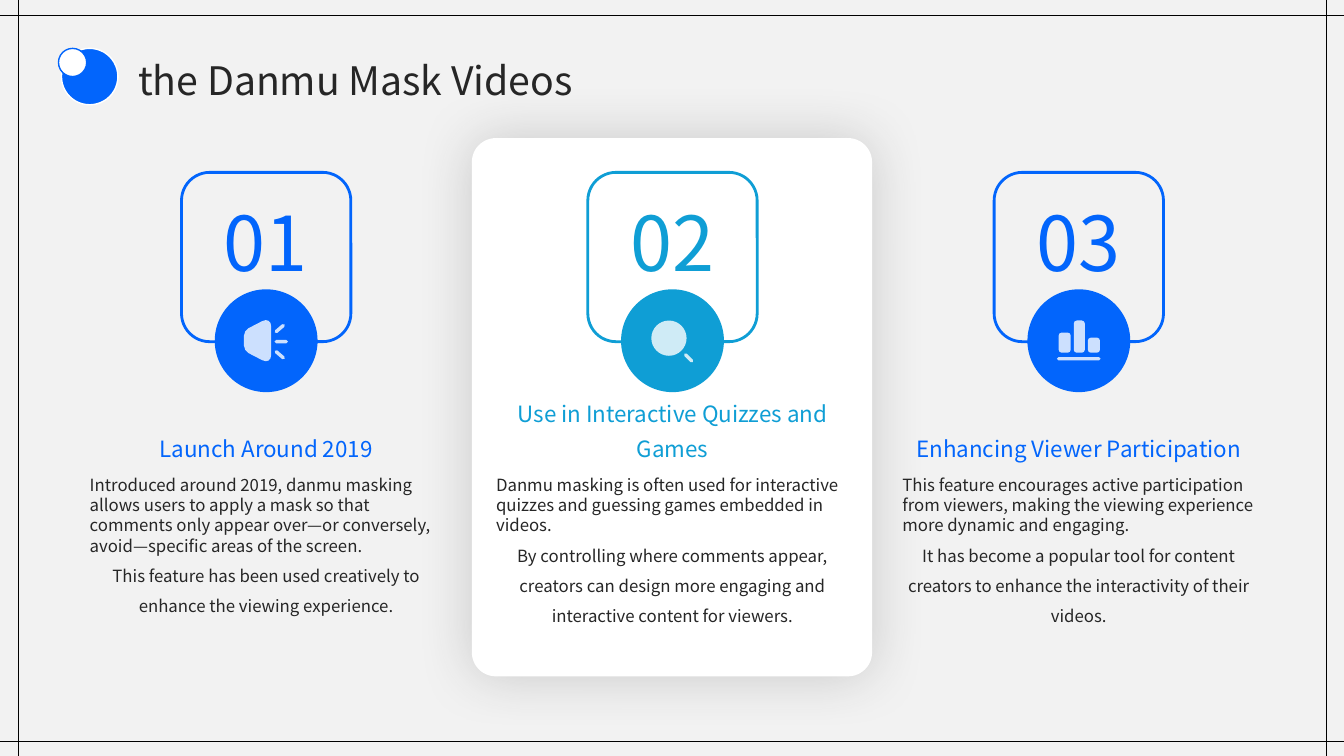
import math
from lxml import etree
from pptx import Presentation
from pptx import util as u
from pptx.dml.color import RGBColor
from pptx.enum import shapes, text
from pptx.oxml.ns import qn

FONT = "Noto Sans CJK SC"
COLORS = {"blue": "0265FC", "cyan": "0F9ED5", "white": "FFFFFF",
          "paper": "F2F2F2", "ink": "262626", "black": "000000"}
ALIGN = text.PP_ALIGN
ANCHOR = text.MSO_ANCHOR
SHAPE = shapes.MSO_SHAPE


def rgb(name):
    return RGBColor.from_string(COLORS[name])


def add_child(parent, tag, **attrs):
    return etree.SubElement(parent, qn(tag), {k: str(v) for k, v in attrs.items()})


def write(tf, content, size=12, color="ink", align=ALIGN.CENTER, spacing=1.0, first=True):
    p = tf.paragraphs[0] if first else tf.add_paragraph()
    p.alignment = align
    p.line_spacing = spacing
    p.space_before = u.Pt(0)
    r = p.add_run()
    r.text = content
    r.font.size = u.Pt(size)
    r.font.name = FONT
    r.font.bold = False
    r.font.color.rgb = rgb(color)
    for tag in ("a:ea", "a:cs"):
        add_child(r.font._element, tag, typeface=FONT)


def rounded(points, radii):
    outline = []
    for i, (x, y) in enumerate(points):
        ends = []
        for nx, ny in (points[i - 1], points[(i + 1) % len(points)]):
            share = radii[i] / math.hypot(nx - x, ny - y)
            ends.append(((nx - x) * share, (ny - y) * share))
        (ax, ay), (bx, by) = ends
        outline += [(x + ax, y + ay), (x + ax * 0.45, y + ay * 0.45),
                    (x + bx * 0.45, y + by * 0.45), (x + bx, y + by)]
    return outline


def curve_corners(path):
    points = [el for el in path if el.tag != qn("a:close")]
    for i in range(0, len(points), 4):
        first, second, last = points[i + 1:i + 4]
        first.tag = qn("a:cubicBezTo")
        for el in (second, last):
            first.append(el[0])
            path.remove(el)


def box(x, y, w, h, r):
    return rounded([(x, y), (x + w, y), (x + w, y + h), (x, y + h)], [r] * 4)


def stroke(x1, y1, x2, y2, half=0.017):
    length = math.hypot(x2 - x1, y2 - y1)
    dx, dy = (x2 - x1) / length * half, (y2 - y1) / length * half
    corners = [(x1 - dx - dy, y1 - dy + dx), (x1 - dx + dy, y1 - dy - dx),
               (x2 + dx + dy, y2 + dy - dx), (x2 + dx - dy, y2 + dy + dx)]
    return rounded(corners, [half] * 4)


SPEAKER = [rounded([(-0.22, -0.1), (0.05, -0.24), (0.05, 0.24), (-0.22, 0.1)],
                   [0.05, 0.1, 0.1, 0.05]),
           stroke(0.1, 0.01, 0.2, 0.01), stroke(0.1, -0.09, 0.17, -0.15),
           stroke(0.1, 0.11, 0.17, 0.17)]
MAGNIFIER = [stroke(0.13, 0.14, 0.19, 0.2), box(-0.21, -0.2, 0.35, 0.35, 0.175)]
BARS = [stroke(-0.2, 0.18, 0.2, 0.18), box(0.09, -0.03, 0.12, 0.15, 0.03),
        box(-0.2, -0.08, 0.12, 0.2, 0.03), box(-0.05, -0.2, 0.11, 0.32, 0.03)]


class Deck:
    def __init__(self):
        self.prs = Presentation()
        self.prs.slide_width = u.Inches(13.33)
        self.prs.slide_height = u.Inches(7.5)
        self.s = self.prs.slides.add_slide(self.prs.slide_layouts[5])

    def frame(self, sp, anchor):
        tf = sp.text_frame
        tf.word_wrap = True
        tf.auto_size = text.MSO_AUTO_SIZE.NONE
        tf.vertical_anchor = anchor
        tf.margin_left = tf.margin_right = tf.margin_top = tf.margin_bottom = 0
        return tf

    def title(self, content, *place):
        sp = self.s.shapes.title
        sp.left, sp.top, sp.width, sp.height = map(u.Inches, place)
        sp.element.getparent().append(sp.element)
        write(self.frame(sp, ANCHOR.MIDDLE), content, size=28, align=ALIGN.LEFT, spacing=1.1)

    def textbox(self, x, y, w, h, anchor=ANCHOR.TOP):
        sp = self.s.shapes.add_textbox(*map(u.Inches, (x, y, w, h)))
        return self.frame(sp, anchor)

    def shape(self, kind, x, y, w, h, fill=None, line=None, width=1, adj=None):
        sp = self.s.shapes.add_shape(kind, *map(u.Inches, (x, y, w, h)))
        sp.shadow.inherit = False
        if adj is not None:
            sp.adjustments[0] = adj
        if fill:
            sp.fill.solid()
            sp.fill.fore_color.rgb = rgb(fill)
        else:
            sp.fill.background()
        if line:
            sp.line.color.rgb = rgb(line)
            sp.line.width = u.Pt(width)
        else:
            sp.line.fill.background()
        return sp

    def glow(self, sp, blur, alpha):
        effects = sp.element.spPr.find(qn("a:effectLst"))
        shadow = add_child(effects, "a:outerShdw", blurRad=u.Pt(blur), dist=0, dir=0,
                           algn="ctr", rotWithShape=0)
        color = add_child(shadow, "a:srgbClr", val=COLORS["ink"])
        add_child(color, "a:alpha", val=alpha * 1000)

    def rule(self, x1, y1, x2, y2):
        c = self.s.shapes.add_connector(shapes.MSO_CONNECTOR.STRAIGHT,
                                        *map(u.Inches, (x1, y1, x2, y2)))
        c.line.color.rgb = rgb("black")
        c.line.width = u.Pt(0.5)
        add_child(c.element.spPr, "a:effectLst")

    def icon(self, outlines, cx, cy):
        paths = [[(u.Inches(cx + x), u.Inches(cy + y)) for x, y in outline]
                 for outline in outlines]
        fb = self.s.shapes.build_freeform(*paths[0][0])
        for i, points in enumerate(paths):
            if i:
                fb.move_to(*points[0])
            fb.add_line_segments(points[1:], close=True)
        sp = fb.convert_to_shape()
        curve_corners(next(sp.element.iter(qn("a:path"))))
        sp.shadow.inherit = False
        sp.fill.solid()
        sp.fill.fore_color.rgb = rgb("white")
        color = sp.element.spPr.find(qn("a:solidFill")).find(qn("a:srgbClr"))
        add_child(color, "a:alpha", val=80000)
        sp.line.fill.background()

    def column(self, x, number, color, icon, heading, intro, detail):
        self.shape(SHAPE.ROUNDED_RECTANGLE, x + 0.91, 1.71, 1.68, 1.68, line=color, width=2)
        self.shape(SHAPE.ROUNDED_RECTANGLE, x + 1.24, 2.87, 1.02, 1.02, fill=color, adj=0.5)
        tf = self.textbox(x + 0.97, 1.76, 1.55, 1.18, ANCHOR.MIDDLE)
        write(tf, number, size=54, color=color, spacing=1.1)
        self.icon(icon, x + 1.75, 3.38)
        tf = self.textbox(x, 4.71, 3.5, 1.72)
        write(tf, intro, align=ALIGN.LEFT)
        write(tf, detail, spacing=1.5, first=False)
        tf = self.textbox(x, 3.92, 3.5, 0.66, ANCHOR.BOTTOM)
        write(tf, heading, size=16, color=color, spacing=1.3)


COLUMNS = [
    ("01", "blue", SPEAKER, "Launch Around 2019",
     "Introduced around 2019, danmu masking allows users to apply a mask so that comments "
     "only appear over—or conversely, avoid—specific areas of the screen.",
     "This feature has been used creatively to enhance the viewing experience."),
    ("02", "cyan", MAGNIFIER, "Use in Interactive Quizzes and Games",
     "Danmu masking is often used for interactive quizzes and guessing games embedded in videos.",
     "By controlling where comments appear, creators can design more engaging and "
     "interactive content for viewers."),
    ("03", "blue", BARS, "Enhancing Viewer Participation",
     "This feature encourages active participation from viewers, making the viewing "
     "experience more dynamic and engaging.",
     "It has become a popular tool for content creators to enhance the interactivity "
     "of their videos."),
]


def main():
    deck = Deck()
    deck.shape(SHAPE.RECTANGLE, 0, 0, 13.33, 7.5, fill="paper")
    for y in (0.15, 7.35):
        deck.rule(0, y, 13.33, y)
    for x in (0.18, 13.16):
        deck.rule(x, 0, x, 7.5)
    card = deck.shape(SHAPE.ROUNDED_RECTANGLE, 4.68, 1.37, 3.97, 5.34, fill="white", adj=0.06)
    deck.glow(card, blur=40, alpha=20)
    for i, column in enumerate(COLUMNS):
        deck.column(0.89 + 4.03 * i, *column)
    deck.title("the Danmu Mask Videos", 1.37, 0.51, 4.78, 0.51)
    deck.shape(SHAPE.OVAL, 0.61, 0.48, 0.56, 0.56, fill="blue", line="white")
    deck.shape(SHAPE.OVAL, 0.58, 0.48, 0.28, 0.28, fill="white", line="blue")
    deck.prs.save("out.pptx")


if __name__ == "__main__":
    main()
